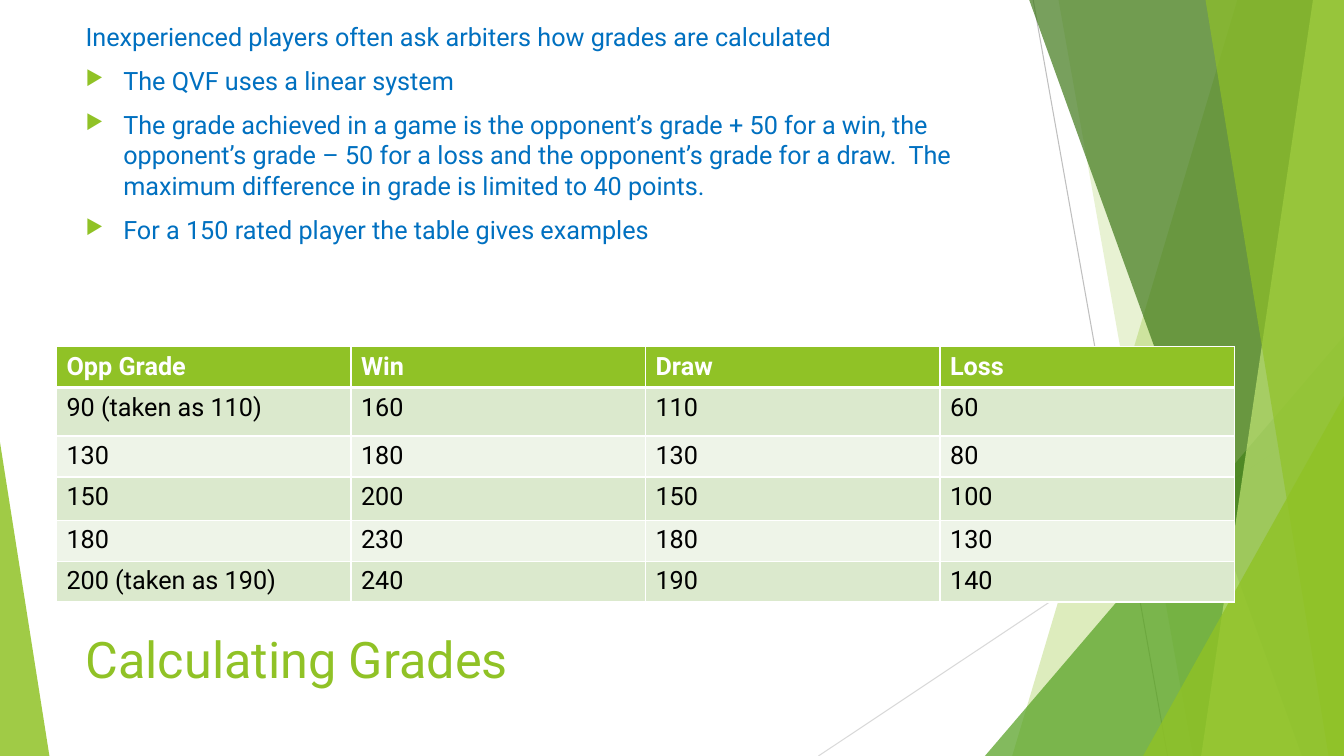
from dataclasses import dataclass

from lxml.etree import SubElement
from pptx import Presentation
from pptx.dml.color import RGBColor
from pptx.enum.shapes import MSO_CONNECTOR, MSO_SHAPE
from pptx.enum.text import MSO_ANCHOR
from pptx.oxml.ns import qn
from pptx.util import Pt


@dataclass(frozen=True)
class Theme:
    font: str = "Roboto"
    lime: str = "90C226"
    green: str = "54A021"
    forest: str = "3F7819"
    pale_lime: str = "C0E474"
    blue: str = "0070C0"
    black: str = "000000"
    white: str = "FFFFFF"
    band_dark: str = "DBE9CD"
    band_light: str = "EEF4E8"
    line_dark: str = "BFBFBF"
    line_light: str = "D9D9D9"
    title_size: int = 36
    text_size: int = 18


THEME = Theme()
WIDTH, HEIGHT = 960, 540
BLEED = 0.6

RAYS = [
    ((738, 0), (834, 540), THEME.line_dark),
    ((960, 290), (584.6, 540), THEME.line_light),
]
# Left edge at the top and at the bottom, colour, opacity in percent
BANDS_BEHIND = [(884, 723, THEME.lime, 30), (756, 852, THEME.lime, 20)]
BANDS_FRONT = [
    (735, 930, THEME.forest, 70),
    (938, 858, THEME.pale_lime, 70),
    (861, 949, THEME.lime, 65),
]
POINTS = [
    "The QVF uses a linear system",
    "The grade achieved in a game is the opponent’s grade + 50 for a win, the "
    "opponent’s grade – 50 for a loss and the opponent’s grade for a draw.  "
    "The maximum difference in grade is limited to 40 points.",
    "For a 150 rated player the table gives examples",
]
GRADES = [
    ("Opp Grade", "Win", "Draw", "Loss"),
    ("90 (taken as 110)", "160", "110", "60"),
    ("130", "180", "130", "80"),
    ("150", "200", "150", "100"),
    ("180", "230", "180", "130"),
    ("200 (taken as 190)", "240", "190", "140"),
]
ROW_HEIGHTS = [29.2, 34.6, 29.2, 31, 29.2, 29.2]
COLUMN_WIDTH = 210.4


def rgb(color):
    return RGBColor.from_string(color)


def write(paragraph, text, size=THEME.text_size, color=THEME.black, bold=False):
    run = paragraph.add_run()
    run.text = text
    run.font.name = THEME.font
    run.font.size = Pt(size)
    run.font.bold = bold
    run.font.color.rgb = rgb(color)


def add_bullet(paragraph):
    properties = paragraph._p.get_or_add_pPr()
    properties.set("marL", str(Pt(27)))
    properties.set("indent", str(-Pt(27)))
    bullet_color = SubElement(properties, qn("a:buClr"))
    SubElement(bullet_color, qn("a:srgbClr"), val=THEME.lime)
    SubElement(properties, qn("a:buSzPct"), val="80000")
    SubElement(properties, qn("a:buChar"), char="▶")


def paint(shape, color, opacity):
    shape.shadow.inherit = False
    shape.line.fill.background()
    shape.fill.solid()
    shape.fill.fore_color.rgb = rgb(color)
    color_node = shape._element.spPr.find(qn("a:solidFill"))[0]
    SubElement(color_node, qn("a:alpha"), val=str(opacity * 1000))


def add_ray(slide, start, end, color):
    ray = slide.shapes.add_connector(
        MSO_CONNECTOR.STRAIGHT, *map(Pt, start), *map(Pt, end))
    ray.line.color.rgb = rgb(color)
    ray.line.width = Pt(0.75)
    SubElement(ray._element.spPr, qn("a:effectLst"))


def add_band(slide, top_x, bottom_x, color, opacity):
    """Slanted left edge, filled to the right side of the slide."""
    outline = slide.shapes.build_freeform(Pt(top_x), Pt(-BLEED))
    corners = [(WIDTH, -BLEED), (WIDTH, HEIGHT), (bottom_x, HEIGHT)]
    outline.add_line_segments([(Pt(x), Pt(y)) for x, y in corners], close=True)
    paint(outline.convert_to_shape(), color, opacity)


def add_corner(slide, left, top, width, apex, color, opacity):
    """Right-angled triangle standing on the slide's bottom edge."""
    corner = slide.shapes.add_shape(
        MSO_SHAPE.ISOSCELES_TRIANGLE, Pt(left), Pt(top), Pt(width), Pt(HEIGHT - top))
    corner.adjustments[0] = apex
    paint(corner, color, opacity)


def add_text_frame(slide, left, top, width, height):
    frame = slide.shapes.add_textbox(Pt(left), Pt(top), Pt(width), Pt(height)).text_frame
    frame.word_wrap = True
    frame.vertical_anchor = MSO_ANCHOR.TOP
    return frame


def add_explanation(slide):
    frame = add_text_frame(slide, 54, 11.5, 672, 327)
    intro = frame.paragraphs[0]
    intro.space_before = Pt(10)
    write(intro, "Inexperienced players often ask arbiters how grades are calculated",
          color=THEME.blue)
    for point in POINTS:
        paragraph = frame.add_paragraph()
        paragraph.space_before = Pt(10)
        add_bullet(paragraph)
        write(paragraph, point, color=THEME.blue)


def set_borders(cell, **widths):
    properties = cell._tc.get_or_add_tcPr()
    for side in "LRTB":
        border = SubElement(properties, qn(f"a:ln{side}"), w=str(Pt(widths.get(side, 1))))
        fill = SubElement(border, qn("a:solidFill"))
        SubElement(fill, qn("a:srgbClr"), val=THEME.white)


def add_grade_table(slide):
    columns = len(GRADES[0])
    table = slide.shapes.add_table(
        len(GRADES), columns, Pt(40.3), Pt(247.7),
        Pt(COLUMN_WIDTH * columns), Pt(sum(ROW_HEIGHTS))).table
    for column in table.columns:
        column.width = Pt(COLUMN_WIDTH)
    for index, (grades, height) in enumerate(zip(GRADES, ROW_HEIGHTS)):
        table.rows[index].height = Pt(height)
        header = index == 0
        band = THEME.band_dark if index % 2 else THEME.band_light
        for cell, grade in zip(table.rows[index].cells, grades):
            set_borders(cell, B=3 if header else 1, T=3 if index == 1 else 1)
            cell.fill.solid()
            cell.fill.fore_color.rgb = rgb(THEME.lime if header else band)
            write(cell.text_frame.paragraphs[0], grade, bold=header,
                  color=THEME.white if header else THEME.black)


def add_backdrop(slide):
    for ray in RAYS:
        add_ray(slide, *ray)
    for band in BANDS_BEHIND:
        add_band(slide, *band)
    add_corner(slide, 703.5, 240, 256.5, 1, THEME.green, 72)
    for band in BANDS_FRONT:
        add_band(slide, *band)
    add_corner(slide, 816.5, 283, 143.5, 1, THEME.lime, 80)
    add_corner(slide, 0, 316, 35.3, 0, THEME.lime, 85)


def main():
    deck = Presentation()
    deck.slide_width, deck.slide_height = Pt(WIDTH), Pt(HEIGHT)
    slide = deck.slides.add_slide(deck.slide_layouts[6])
    add_backdrop(slide)
    title = add_text_frame(slide, 54, 445, 672, 75)
    write(title.paragraphs[0], "Calculating Grades",
          size=THEME.title_size, color=THEME.lime)
    add_explanation(slide)
    add_grade_table(slide)
    deck.save("out.pptx")


if __name__ == "__main__":
    main()
